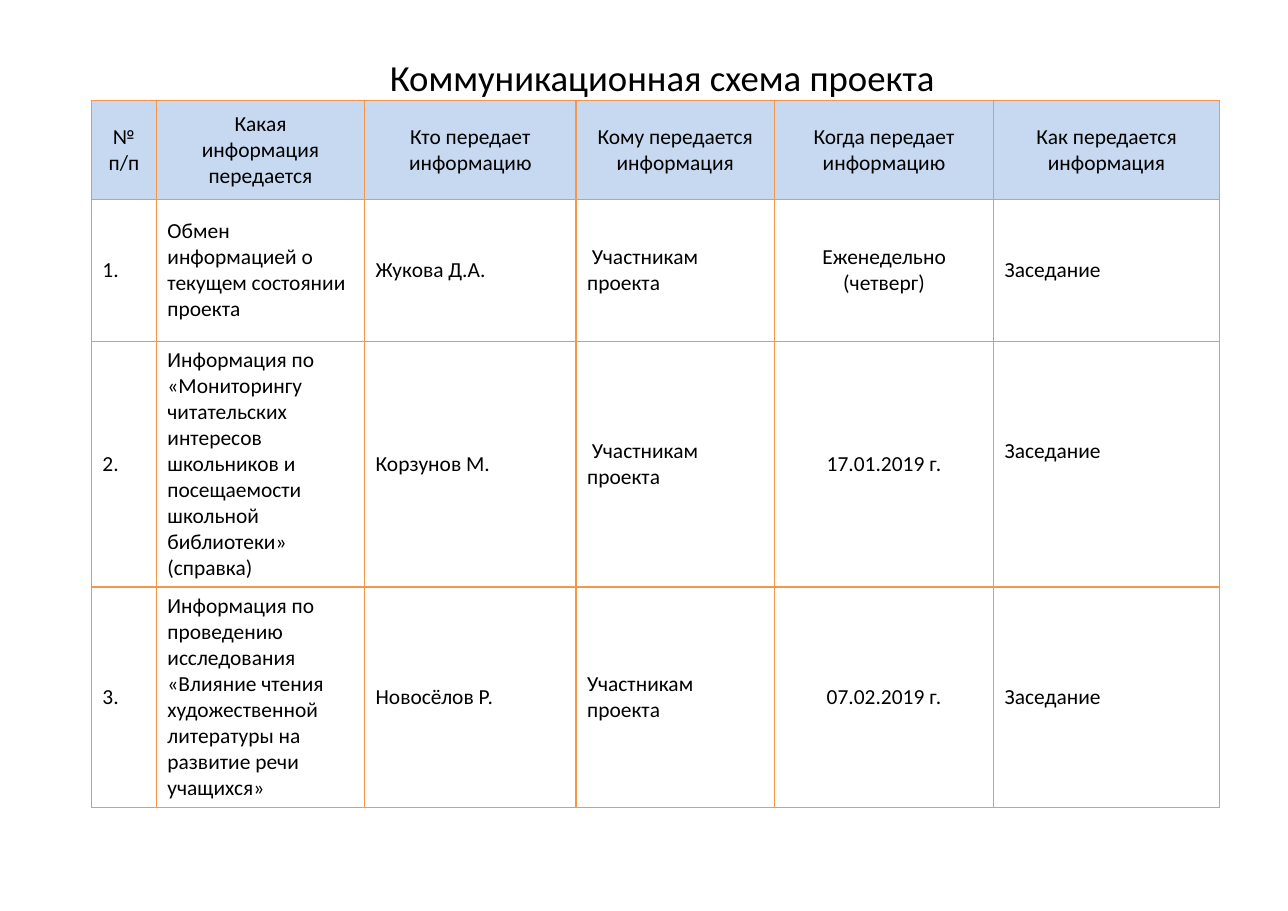
from lxml import etree
from pptx import Presentation
from pptx.dml.color import RGBColor
from pptx.enum.text import MSO_ANCHOR, PP_ALIGN
from pptx.oxml.ns import qn
from pptx.util import Inches, Pt

CENTER, LEFT = PP_ALIGN.CENTER, PP_ALIGN.LEFT
MIDDLE = MSO_ANCHOR.MIDDLE
BLACK = RGBColor(0x00, 0x00, 0x00)
ORANGE = RGBColor(0xF7, 0x96, 0x46)
PALE_BLUE = RGBColor(0xC6, 0xD9, 0xF1)
FONT = "Calibri"

COL_WIDTHS = [0.59, 1.89, 1.92, 1.8, 1.99, 2.05]
ROW_HEIGHTS = [0.9, 1.29, 2.23, 2.0]
WHEN_COL = 4
LINE_HEIGHT = 0.24

HEADER = [
    "№\nп/п",
    "Какая\nинформация\nпередается",
    "Кто передает\nинформацию",
    "Кому передается\nинформация",
    "Когда передает\nинформацию",
    "Как передается\nинформация",
]
ROWS = [
    ["1.", "Обмен информацией о текущем состоянии проекта", "Жукова Д.А.",
     " Участникам проекта", "Еженедельно (четверг)", "Заседание"],
    ["2.", "Информация по «Мониторингу читательских интересов школьников и "
     "посещаемости школьной библиотеки» (справка)", "Корзунов М.",
     " Участникам проекта", "17.01.2019 г.", "Заседание"],
    ["3.", "Информация по проведению исследования «Влияние чтения "
     "художественной литературы на развитие речи учащихся»", "Новосёлов Р.",
     "Участникам проекта", "07.02.2019 г.", "Заседание"],
]


def write_text(tf, text, size, align):
    tf.text = text
    for p in tf.paragraphs:
        p.alignment = align
        p.font.name = FONT
        p.font.size = Pt(size)
        p.font.color.rgb = BLACK


def add_title(s, text):
    tb = s.shapes.add_textbox(Inches(1.24), Inches(0.22), Inches(9.54), Inches(1.01))
    tf = tb.text_frame
    tf.word_wrap = True
    tf.vertical_anchor = MIDDLE
    write_text(tf, text, 24, CENTER)
    tf.paragraphs[0].line_spacing = 0.85


def set_borders(cell):
    tc_pr = cell._tc.get_or_add_tcPr()
    for side in ("a:lnL", "a:lnR", "a:lnT", "a:lnB"):
        ln = etree.SubElement(tc_pr, qn(side), w=str(Pt(1)))
        fill = etree.SubElement(ln, qn("a:solidFill"))
        etree.SubElement(fill, qn("a:srgbClr"), val=str(ORANGE))


def fill_cell(cell, text, align, color=None):
    cell.vertical_anchor = MIDDLE
    set_borders(cell)
    if color is None:
        cell.fill.background()
    else:
        cell.fill.solid()
        cell.fill.fore_color.rgb = color
    write_text(cell.text_frame, text, 14, align)


def add_scheme_table(s):
    frame = s.shapes.add_table(
        len(ROW_HEIGHTS), len(COL_WIDTHS), Inches(0.83), Inches(0.91),
        Inches(sum(COL_WIDTHS)), Inches(sum(ROW_HEIGHTS)))
    table = frame.table
    table.first_row = table.horz_banding = False
    for column, width in zip(table.columns, COL_WIDTHS):
        column.width = Inches(width)
    for row, height in zip(table.rows, ROW_HEIGHTS):
        row.height = Inches(height)
    for c, text in enumerate(HEADER):
        fill_cell(table.cell(0, c), text, CENTER, PALE_BLUE)
    for r, row in enumerate(ROWS, start=1):
        for c, text in enumerate(row):
            fill_cell(table.cell(r, c), text, CENTER if c == WHEN_COL else LEFT)
    # The second meeting sits half a line above the middle of its row
    table.cell(2, 5).margin_bottom = Inches(0.05 + LINE_HEIGHT)


def main():
    prs = Presentation()
    prs.slide_width, prs.slide_height = Inches(11.69), Inches(8.27)
    s = prs.slides.add_slide(prs.slide_layouts[6])
    add_title(s, "Коммуникационная схема проекта")
    add_scheme_table(s)
    prs.save("out.pptx")


if __name__ == "__main__":
    main()
